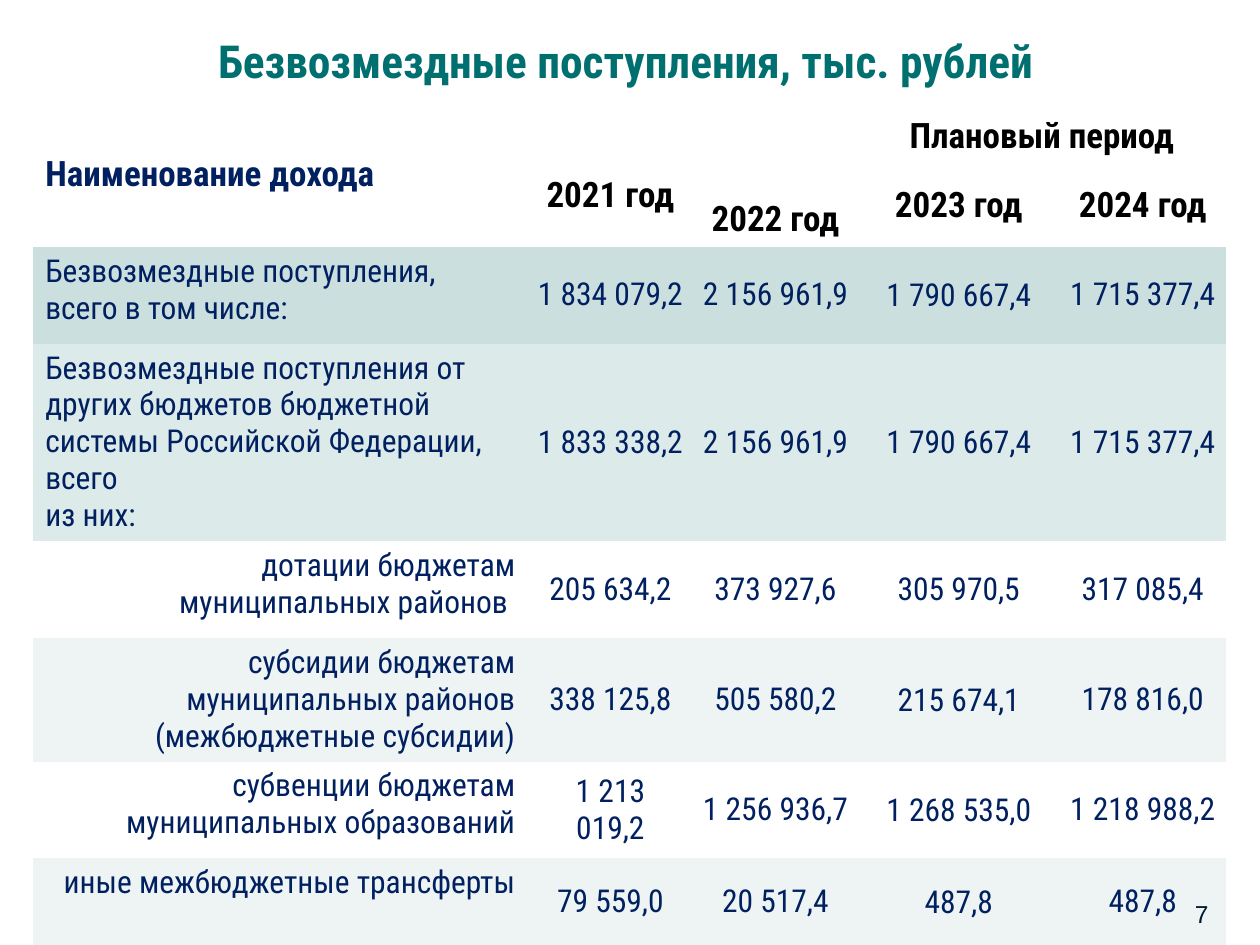
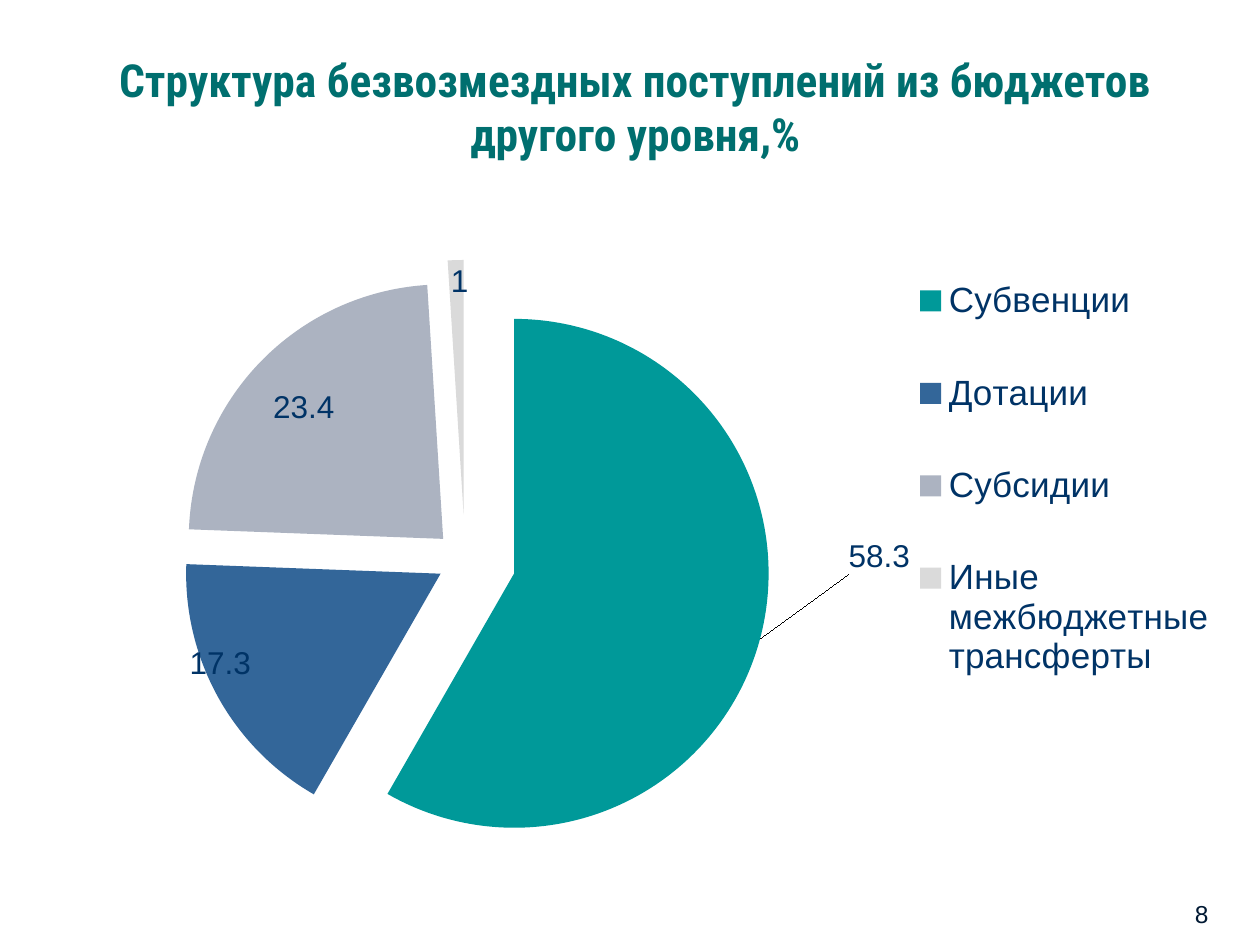
from lxml import etree
from pptx import Presentation
from pptx.chart.data import CategoryChartData
from pptx.dml.color import RGBColor
from pptx.enum.chart import XL_CHART_TYPE, XL_LABEL_POSITION, XL_LEGEND_POSITION
from pptx.enum.text import MSO_ANCHOR, PP_ALIGN
from pptx.oxml.ns import qn
from pptx.util import Inches, Pt

# Shared look
TEAL = RGBColor(0x00, 0x6F, 0x6F)
NAVY = RGBColor(0x00, 0x20, 0x60)
BLACK = RGBColor(0x00, 0x00, 0x00)
WHITE = RGBColor(0xFF, 0xFF, 0xFF)
TOTAL_FILL = RGBColor(0xCC, 0xDF, 0xDF)
SUBTOTAL_FILL = RGBColor(0xDD, 0xEA, 0xEA)
BAND_FILL = RGBColor(0xEE, 0xF4, 0xF4)
PAGE_COLOR = RGBColor(0x00, 0x19, 0x33)
CHART_TEXT = RGBColor(0x00, 0x33, 0x66)
HEAD_FONT, BODY_FONT = "Roboto Condensed", "Arial"
NO_GRID_STYLE = "{2D5ABB26-0587-4C30-8999-92F81FD0307C}"

# Cell insets: left, top, right, bottom
WIDE = (0.1, 0.05, 0.1, 0.05)
NARROW = (0.07, 0, 0.07, 0)
TIGHT = (0.01, 0.01, 0.01, 0)
NONE = (0, 0, 0, 0)
BELOW_LINE = (0.07, 0.33, 0.07, 0)

COLUMN_WIDTHS = (3.93, 1.31, 1.31, 1.6, 1.32)
ROW_HEIGHTS = (0.48, 0.37, 0.77, 1.43, 0.77, 0.81, 0.77, 0.69)

# Row, column, text, colour, alignment, anchor, insets
HEADERS = [
    (0, 0, "Наименование дохода", NAVY, PP_ALIGN.LEFT, MSO_ANCHOR.MIDDLE, WIDE),
    (0, 1, "2021 год", BLACK, PP_ALIGN.CENTER, MSO_ANCHOR.MIDDLE, BELOW_LINE),
    (0, 2, "2022 год", BLACK, PP_ALIGN.CENTER, MSO_ANCHOR.BOTTOM, WIDE),
    (0, 3, "Плановый период", BLACK, PP_ALIGN.CENTER, MSO_ANCHOR.BOTTOM, WIDE),
    (1, 3, "2023 год", BLACK, PP_ALIGN.CENTER, MSO_ANCHOR.MIDDLE, NARROW),
    (1, 4, "2024 год", BLACK, PP_ALIGN.CENTER, MSO_ANCHOR.MIDDLE, NARROW),
]

# Fill, name paragraphs, values by year
INCOME = [
    (TOTAL_FILL, ["Безвозмездные поступления, всего в том числе:"],
     ("1 834 079,2", "2 156 961,9", "1 790 667,4", "1 715 377,4")),
    (SUBTOTAL_FILL,
     ["Безвозмездные поступления от других бюджетов бюджетной системы "
      "Российской Федерации, всего", "из них:"],
     ("1 833 338,2", "2 156 961,9", "1 790 667,4", "1 715 377,4")),
    (WHITE, ["дотации бюджетам муниципальных районов "],
     ("205 634,2", "373 927,6", "305 970,5", "317 085,4")),
    (BAND_FILL, ["субсидии бюджетам муниципальных районов (межбюджетные субсидии)"],
     ("338 125,8", "505 580,2", "215 674,1", "178 816,0")),
    (WHITE, ["субвенции бюджетам муниципальных образований"],
     ("1 213 019,2", "1 256 936,7", "1 268 535,0", "1 218 988,2")),
    (BAND_FILL, ["иные межбюджетные трансферты"],
     ("79 559,0", "20 517,4", "487,8", "487,8")),
]

# Name, share, colour, explosion, label offset
SLICES = [
    ("Субвенции", 58.3, RGBColor(0x00, 0x99, 0x99), 20, (0.2, -0.07)),
    ("Дотации", 17.3, RGBColor(0x33, 0x66, 0x99), 11, (-0.09, 0.04)),
    ("Субсидии", 23.4, RGBColor(0xAC, 0xB3, 0xC1), 12, (-0.04, -0.06)),
    ("Иные межбюджетные трансферты", 1, RGBColor(0xDA, 0xDA, 0xDA), 18, (0, -0.15)),
]


def inches(box):
    return [Inches(v) for v in box]


def add_run(p, text, size, color, font=HEAD_FONT, bold=False):
    r = p.add_run()
    r.text = text
    r.font.size, r.font.name, r.font.bold = Pt(size), font, bold
    r.font.color.rgb = color


def add_titled_slide(prs, title, box, page):
    s = prs.slides.add_slide(prs.slide_layouts[5])
    sp = s.shapes.title
    sp.left, sp.top, sp.width, sp.height = inches(box)
    tf = sp.text_frame
    tf.word_wrap, tf.vertical_anchor = True, MSO_ANCHOR.MIDDLE
    p = tf.paragraphs[0]
    p.alignment = PP_ALIGN.CENTER
    add_run(p, title, 26, TEAL, bold=True)
    return s


def add_page_number(s, page):
    tf = s.shapes.add_textbox(*inches((7.36, 6.9, 2.33, 0.52))).text_frame
    tf.word_wrap, tf.vertical_anchor = True, MSO_ANCHOR.BOTTOM
    p = tf.paragraphs[0]
    p.alignment = PP_ALIGN.RIGHT
    add_run(p, str(page), 14, PAGE_COLOR, BODY_FONT)


def fill_cell(cell, texts, size, color, fill, align, anchor, insets, bold=False):
    cell.fill.solid()
    cell.fill.fore_color.rgb = fill
    (cell.margin_left, cell.margin_top,
     cell.margin_right, cell.margin_bottom) = inches(insets)
    cell.vertical_anchor = anchor
    tf = cell.text_frame
    for i, text in enumerate(texts):
        p = tf.add_paragraph() if i else tf.paragraphs[0]
        p.alignment = align
        add_run(p, text, size, color, bold=bold)


def add_income_table(s, box):
    frame = s.shapes.add_table(len(ROW_HEIGHTS), len(COLUMN_WIDTHS), *inches(box))
    table = frame.table
    table._tbl.tblPr.find(qn("a:tableStyleId")).text = NO_GRID_STYLE
    for column, width in zip(table.columns, COLUMN_WIDTHS):
        column.width = Inches(width)
    for row, height in zip(table.rows, ROW_HEIGHTS):
        row.height = Inches(height)

    # Two-row header
    for c in range(3):
        table.cell(0, c).merge(table.cell(1, c))
    table.cell(0, 3).merge(table.cell(0, 4))
    for r, c, text, color, align, anchor, insets in HEADERS:
        fill_cell(table.cell(r, c), [text], 20, color, WHITE, align, anchor, insets, True)

    # Income rows: the first two are totals, the rest are their parts
    for i, (fill, name, values) in enumerate(INCOME):
        is_total = i < 2
        align = PP_ALIGN.LEFT if is_total else PP_ALIGN.RIGHT
        fill_cell(table.cell(i + 2, 0), name, 18, NAVY, fill, align, MSO_ANCHOR.TOP, WIDE)
        value_insets = (NARROW if is_total else WIDE, NARROW, TIGHT, NONE)
        for c, (value, insets) in enumerate(zip(values, value_insets), 1):
            fill_cell(table.cell(i + 2, c), [value], 18, NAVY, fill,
                      PP_ALIGN.CENTER, MSO_ANCHOR.MIDDLE, insets)


def manual_layout(**values):
    layout = etree.Element(qn("c:layout"))
    manual = etree.SubElement(layout, qn("c:manualLayout"))
    for tag, value in values.items():
        etree.SubElement(manual, qn("c:" + tag)).set("val", str(value))
    return layout


def replace_layout(parent, layout, index):
    for old in parent.findall(qn("c:layout")):
        parent.remove(old)
    parent.insert(index, layout)


def add_structure_pie(s, box):
    data = CategoryChartData()
    data.categories = [item[0] for item in SLICES]
    data.add_series("Series 1", [item[1] for item in SLICES])
    chart = s.shapes.add_chart(XL_CHART_TYPE.PIE, *inches(box), data).chart
    chart.has_title = False
    chart.font.size, chart.font.name = Pt(18), BODY_FONT
    chart.font.color.rgb = CHART_TEXT
    plot = chart.plots[0]
    plot.vary_by_categories = True

    # Legend and pie areas
    chart.has_legend = True
    legend = chart.legend
    legend.position, legend.include_in_layout = XL_LEGEND_POSITION.RIGHT, False
    legend.font.size, legend.font.name = Pt(20), BODY_FONT
    legend.font.color.rgb = CHART_TEXT
    replace_layout(legend._element, manual_layout(
        xMode="edge", yMode="edge", x=0.72, y=0.05, w=0.26, h=0.71), 1)
    replace_layout(chart._chartSpace.chart.plotArea, manual_layout(
        layoutTarget="inner", xMode="edge", yMode="edge",
        x=0.09, y=0.07, w=0.53, h=0.9), 0)

    # Slices with their labels
    series = plot.series[0]
    labels = series.data_labels
    labels.show_value, labels.position = True, XL_LABEL_POSITION.CENTER
    for i, (_, _, color, explosion, (dx, dy)) in enumerate(SLICES):
        point = series.points[i]
        point.format.fill.solid()
        point.format.fill.fore_color.rgb = color
        point.data_label.position = XL_LABEL_POSITION.CENTER
    ser = series._element
    for dpt, dlbl, item in zip(ser.findall(qn("c:dPt")), ser.iter(qn("c:dLbl")), SLICES):
        add_explosion(dpt.find(qn("c:idx")), item[3])
        dx, dy = item[4]
        replace_layout(dlbl, manual_layout(x=dx, y=dy), 1)
    add_explosion(ser.find(qn("c:tx")), 25)


def add_explosion(before, percent):
    explosion = etree.Element(qn("c:explosion"))
    explosion.set("val", str(percent))
    before.addnext(explosion)


def build_income_slide(prs):
    s = add_titled_slide(prs, "Безвозмездные поступления, тыс. рублей",
                         (0.47, 0.19, 9, 0.58), 7)
    add_income_table(s, (0.26, 0.82, 9.46, 6.08))
    add_page_number(s, 7)


def build_structure_slide(prs):
    s = add_titled_slide(
        prs, "Структура безвозмездных поступлений из бюджетов другого уровня,%",
        (0.28, 0.21, 9.53, 1.27), 8)
    add_structure_pie(s, (0.28, 1.53, 9.61, 5.61))
    add_page_number(s, 8)


def main():
    prs = Presentation()
    prs.slide_width, prs.slide_height = Inches(10), Inches(7.5)
    build_income_slide(prs)
    build_structure_slide(prs)
    prs.save("out.pptx")


if __name__ == "__main__":
    main()
